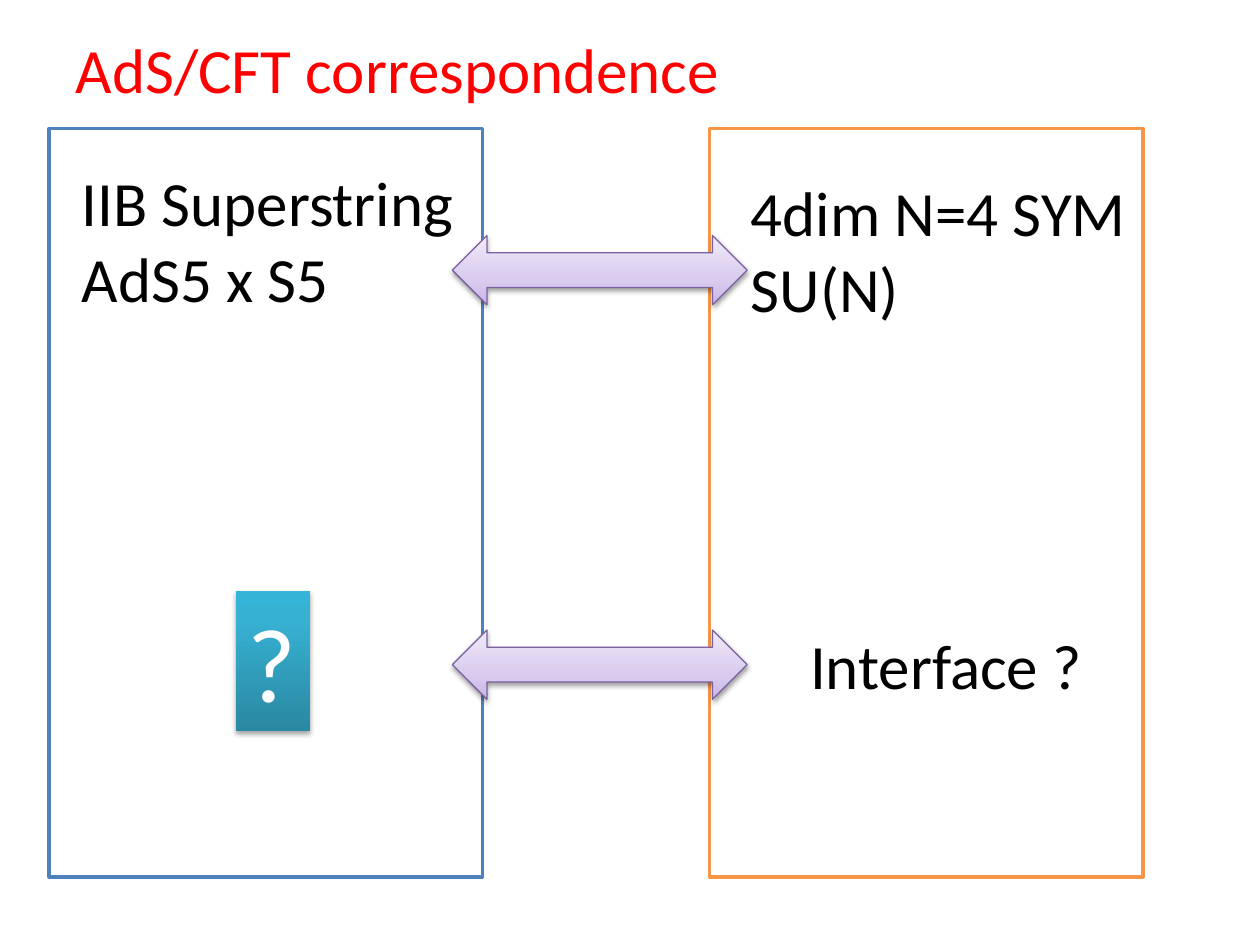
from dataclasses import dataclass

from lxml import etree
from pptx import Presentation
from pptx.dml.color import RGBColor
from pptx.enum.shapes import MSO_SHAPE
from pptx.enum.text import MSO_ANCHOR, MSO_AUTO_SIZE, PP_ALIGN
from pptx.oxml.ns import qn
from pptx.util import Pt

RECT = MSO_SHAPE.RECTANGLE
ARROW = MSO_SHAPE.LEFT_RIGHT_ARROW
TOP, MIDDLE = MSO_ANCHOR.TOP, MSO_ANCHOR.MIDDLE
LEFT = PP_ALIGN.LEFT
NO_FIT, GROW = MSO_AUTO_SIZE.NONE, MSO_AUTO_SIZE.SHAPE_TO_FIT_TEXT
TITLE_ONLY = 5


@dataclass(frozen=True)
class Theme:
    font: str = "Calibri"
    body_size: float = 36
    mark_size: float = 60
    title: str = "FF0000"
    text: str = "000000"
    paper: str = "FFFFFF"
    gravity: str = "4F81BD"
    gauge: str = "F79646"
    arrow_line: str = "7D60A0"
    arrow_stops: tuple = ((0, "C9B5E8"), (35, "D8CBEE"), (100, "F0EAF9"))
    mark_stops: tuple = ((0, "2A88A2"), (80, "37B1D2"), (100, "34B4D6"))


THEME = Theme()


@dataclass(frozen=True)
class Box:
    x: float
    y: float
    w: float
    h: float

    def emu(self) -> tuple:
        return Pt(self.x), Pt(self.y), Pt(self.w), Pt(self.h)


@dataclass(frozen=True)
class Label:
    box: Box
    lines: tuple


def rgb(value: str) -> RGBColor:
    return RGBColor.from_string(value)


def write(tf, lines: tuple, size: float, color: str) -> None:
    tf.text = "\n".join(lines)
    for p in tf.paragraphs:
        p.alignment = LEFT
        p.font.name = THEME.font
        p.font.size = Pt(size)
        p.font.color.rgb = rgb(color)


def add_shape(s, kind, box: Box):
    sp = s.shapes.add_shape(kind, *box.emu())
    sp.shadow.inherit = False
    return sp


def add_panel(s, box: Box, color: str) -> None:
    sp = add_shape(s, RECT, box)
    sp.fill.solid()
    sp.fill.fore_color.rgb = rgb(THEME.paper)
    sp.line.color.rgb = rgb(color)
    sp.line.width = Pt(2)


def add_label(s, label: Label) -> None:
    tf = s.shapes.add_textbox(*label.box.emu()).text_frame
    tf.word_wrap = False
    tf.auto_size = GROW
    write(tf, label.lines, THEME.body_size, THEME.text)


def set_gradient(sp, stops: tuple) -> None:
    """Upward gradient with any number of stops."""
    sp.fill.gradient()
    sp.fill.gradient_angle = 90
    stop_list = next(sp._element.spPr.iter(qn("a:gsLst")))
    stop_list.clear()
    for position, color in stops:
        stop = etree.SubElement(stop_list, qn("a:gs"), pos=str(position * 1000))
        etree.SubElement(stop, qn("a:srgbClr"), val=color)


def set_shadow(sp, distance: float, opacity: int) -> None:
    effects = sp._element.spPr.find(qn("a:effectLst"))
    shadow = etree.SubElement(
        effects, qn("a:outerShdw"), blurRad=str(Pt(3.1)),
        dist=str(Pt(distance)), dir="5400000", rotWithShape="0")
    color = etree.SubElement(shadow, qn("a:srgbClr"), val="000000")
    etree.SubElement(color, qn("a:alpha"), val=str(opacity * 1000))


def add_arrow(s, box: Box) -> None:
    sp = add_shape(s, ARROW, box)
    set_gradient(sp, THEME.arrow_stops)
    sp.line.color.rgb = rgb(THEME.arrow_line)
    sp.line.width = Pt(0.75)
    set_shadow(sp, 1.6, 38)


def add_question_mark(s, box: Box) -> None:
    sp = add_shape(s, RECT, box)
    set_gradient(sp, THEME.mark_stops)
    sp.line.fill.background()
    set_shadow(sp, 1.8, 35)
    tf = sp.text_frame
    tf.word_wrap = False
    tf.auto_size = GROW
    tf.vertical_anchor = TOP
    write(tf, ("?",), THEME.mark_size, THEME.paper)


def add_title(s, box: Box, text: str) -> None:
    sp = s.shapes.title
    sp.left, sp.top, sp.width, sp.height = box.emu()
    tf = sp.text_frame
    tf.auto_size = NO_FIT
    tf.vertical_anchor = MIDDLE
    write(tf, (text,), THEME.body_size, THEME.title)


def main() -> None:
    prs = Presentation()
    prs.slide_width, prs.slide_height = Pt(720), Pt(540)
    s = prs.slides.add_slide(prs.slide_layouts[TITLE_ONLY])
    add_title(s, Box(36, 21.6, 459.4, 34.6), "AdS/CFT correspondence")

    # The two sides of the duality
    for x, color in ((28.1, THEME.gravity), (405.4, THEME.gauge)):
        add_panel(s, Box(x, 73.4, 247.7, 427.7), color)

    # Theories on each side
    for label in (
        Label(Box(39.6, 90, 229, 94.3), ("IIB Superstring", "AdS5 x S5")),
        Label(Box(421.9, 95.8, 231.1, 94.3), ("4dim N=4 SYM", "SU(N)")),
        Label(Box(455.8, 354.2, 171.4, 51.1), ("Interface ?",)),
    ):
        add_label(s, label)

    # Correspondences
    for y in (134.6, 360):
        add_arrow(s, Box(258.5, y, 168.5, 39.6))

    # Unknown gravity counterpart
    add_question_mark(s, Box(134.6, 337.7, 42.5, 79.9))

    prs.save("out.pptx")


if __name__ == "__main__":
    main()
